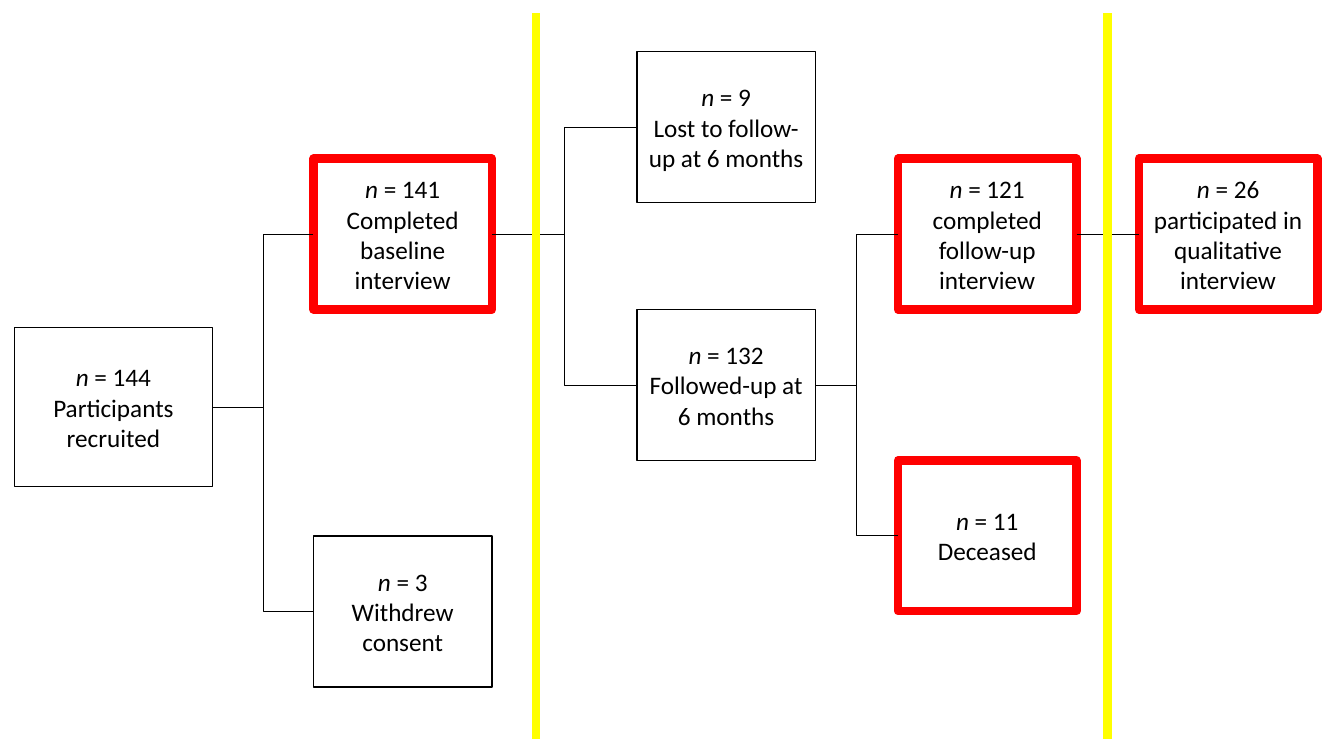
"""Build a participant flow chart from recruitment to the qualitative interview."""
from dataclasses import dataclass

from lxml.etree import SubElement
from pptx import Presentation
from pptx.dml.color import RGBColor
from pptx.enum.shapes import MSO_CONNECTOR as Connector, MSO_SHAPE as Shape
from pptx.enum.text import MSO_ANCHOR as Anchor, PP_ALIGN as Align
from pptx.oxml.ns import qn
from pptx.shapes.autoshape import Shape as AutoShape
from pptx.shapes.connector import Connector as ConnectorShape
from pptx.slide import Slide
from pptx.util import Cm, Pt

BLACK, WHITE, RED, YELLOW = "000000", "FFFFFF", "FF0000", "FFFF00"
LEFT_SITE, RIGHT_SITE = 1, 3
BASELINE_X, FOLLOW_UP_X, OUTCOME_X, QUALITATIVE_X = 7.9, 16.05, 22.63, 28.7
INTERVIEW_Y = 4.0


@dataclass(frozen=True)
class Stage:
    name: str
    left: float
    top: float
    paragraphs: tuple[str, ...]
    highlighted: bool = False
    width: float = 4.5
    height: float = 3.8


@dataclass(frozen=True)
class Link:
    start: str
    end: str
    kind: Connector = Connector.ELBOW


STAGES = [
    Stage("recruited", 0.36, 8.26, (" = 144 Participants recruited",), width=5, height=4),
    Stage("withdrew", BASELINE_X, 13.51, (" = 3", "Withdrew consent")),
    Stage("baseline", BASELINE_X, INTERVIEW_Y, (" = 141", "Completed baseline interview"), True),
    Stage("lost", FOLLOW_UP_X, 1.3, (" = 9", "Lost to follow-up at 6 months")),
    Stage("followed", FOLLOW_UP_X, 7.8, (" = 132", "Followed-up at 6 months")),
    Stage("deceased", OUTCOME_X, 11.6, (" = 11 Deceased",), True),
    Stage("completed", OUTCOME_X, INTERVIEW_Y, (" = 121 completed follow-up interview",), True),
    Stage("qualitative", QUALITATIVE_X, INTERVIEW_Y,
          (" = 26 participated in qualitative interview",), True),
]
LINKS = [
    Link("baseline", "lost"),
    Link("baseline", "followed"),
    Link("recruited", "baseline"),
    Link("recruited", "withdrew"),
    Link("followed", "deceased"),
    Link("followed", "completed"),
    Link("completed", "qualitative", Connector.STRAIGHT),
]
DIVIDERS = [13.51, 27.91]
DIVIDER_TOP, DIVIDER_BOTTOM = 0.33, 18.62


def color(value: str) -> RGBColor:
    return RGBColor.from_string(value)


def style_line(shape: AutoShape | ConnectorShape, value: str, width: float) -> None:
    shape.line.color.rgb = color(value)
    shape.line.width = Pt(width)


def add_run(paragraph, text: str, italic: bool = False) -> None:
    run = paragraph.add_run()
    run.text = text
    run.font.name = "Calibri"
    run.font.size = Pt(18)
    run.font.italic = italic
    run.font.color.rgb = color(BLACK)


def add_stage(slide: Slide, stage: Stage) -> AutoShape:
    shape = slide.shapes.add_shape(
        Shape.RECTANGLE, Cm(stage.left), Cm(stage.top), Cm(stage.width), Cm(stage.height))
    shape.shadow.inherit = False
    shape.fill.solid()
    shape.fill.fore_color.rgb = color(WHITE)
    style_line(shape, RED if stage.highlighted else BLACK, 6 if stage.highlighted else 1)
    frame = shape.text_frame
    frame.word_wrap = True
    frame.vertical_anchor = Anchor.MIDDLE
    for index, text in enumerate(stage.paragraphs):
        paragraph = frame.add_paragraph() if index else frame.paragraphs[0]
        paragraph.alignment = Align.CENTER
        if index == 0:
            add_run(paragraph, "n", italic=True)
        add_run(paragraph, text)
    return shape


def add_line(slide: Slide, kind: Connector, start: tuple[float, float],
             end: tuple[float, float], value: str, width: float) -> ConnectorShape:
    points = [Cm(length) for length in (*start, *end)]
    connector = slide.shapes.add_connector(kind, *points)
    style_line(connector, value, width)
    SubElement(connector._element.spPr, qn("a:effectLst"))
    return connector


def add_link(slide: Slide, link: Link, shapes: dict[str, AutoShape]) -> None:
    connector = add_line(slide, link.kind, (0, 0), (0, 0), BLACK, 0.5)
    connector.begin_connect(shapes[link.start], RIGHT_SITE)
    connector.end_connect(shapes[link.end], LEFT_SITE)


def main() -> None:
    presentation = Presentation()
    presentation.slide_width, presentation.slide_height = Cm(33.87), Cm(19.05)
    slide = presentation.slides.add_slide(presentation.slide_layouts[6])
    shapes = {stage.name: add_stage(slide, stage) for stage in STAGES}
    for link in LINKS:
        add_link(slide, link, shapes)
    for x in DIVIDERS:
        add_line(slide, Connector.STRAIGHT, (x, DIVIDER_TOP), (x, DIVIDER_BOTTOM), YELLOW, 6)
    presentation.save("out.pptx")


if __name__ == "__main__":
    main()
